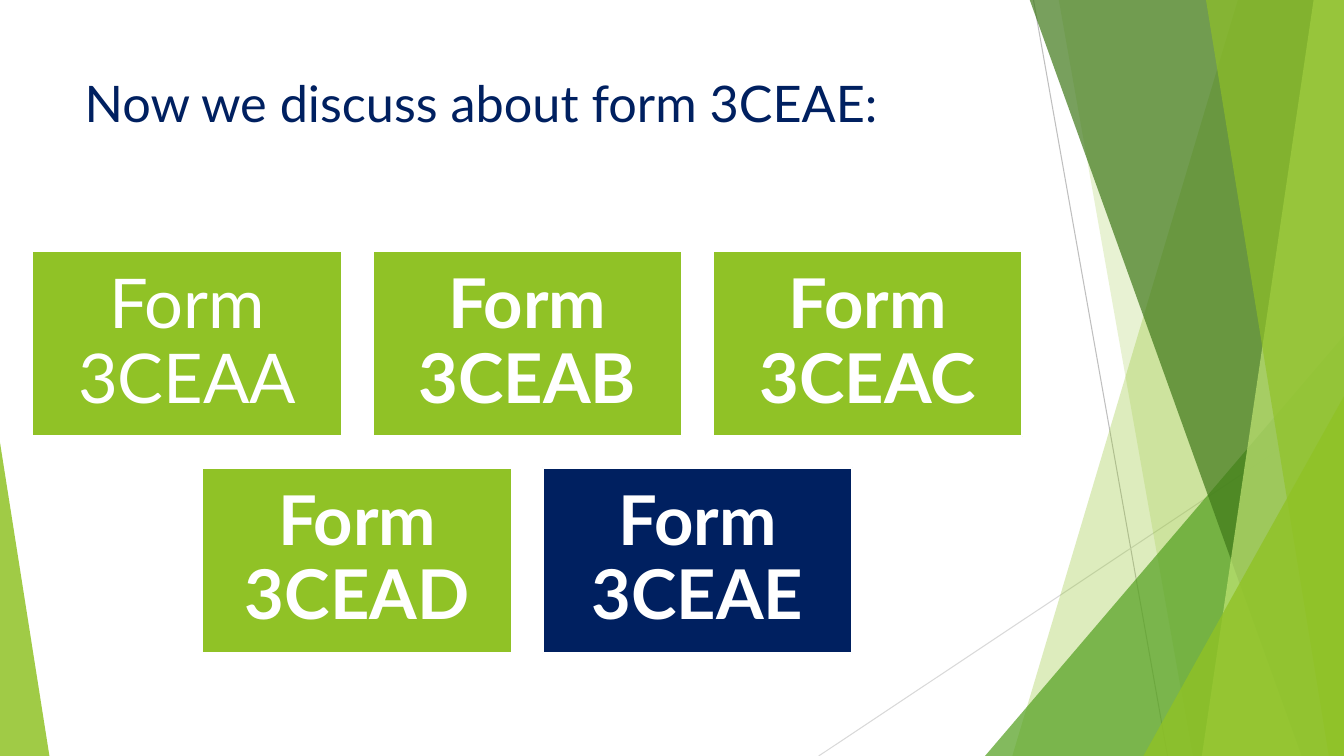
"""Build the slide that introduces form 3CEAE."""
from pptx import Presentation
from pptx.dml.color import RGBColor
from pptx.enum import shapes as es, text as et
from pptx.oxml.ns import qn
from pptx.util import Inches, Pt
from lxml import etree

WIDE, HIGH, TOP = 13.33, 7.5, -0.01
LIME, NAVY, WHITE = "90C226", "002060", "FFFFFF"
BOX_W, BOX_H, STEP_X, STEP_Y = 3.07, 1.84, 3.375, 2.15


def paint(color, code):
    """Set a colour format from a hex string."""
    color.rgb = RGBColor.from_string(code)


def tint(shape, code, alpha):
    """Give a shape a see-through fill and no line or shadow."""
    shape.shadow.inherit = False
    shape.fill.solid()
    paint(shape.fill.fore_color, code)
    clr = shape._element.spPr.find(".//" + qn("a:srgbClr"))
    etree.SubElement(clr, qn("a:alpha")).set("val", str(alpha * 1000))
    shape.line.fill.background()


def add_line(slide, start, end, code):
    """Draw a thin straight line."""
    ends = [Inches(n) for n in (*start, *end)]
    line = slide.shapes.add_connector(es.MSO_CONNECTOR.STRAIGHT, *ends)
    paint(line.line.color, code)
    line.line.width = Pt(0.75)
    etree.SubElement(line._element.spPr, qn("a:effectLst"))


def add_band(slide, top_x, low_x, code, alpha):
    """Draw a band from a slanted left edge to the right slide edge."""
    pen = slide.shapes.build_freeform(Inches(top_x), Inches(TOP), 1.0)
    ends = [(WIDE, TOP), (WIDE, HIGH), (low_x, HIGH)]
    pen.add_line_segments([(Inches(x), Inches(y)) for x, y in ends])
    tint(pen.convert_to_shape(), code, alpha)


def add_peak(slide, left, top, width, tip, code, alpha):
    """Draw a triangle that stands on the bottom slide edge."""
    place = [Inches(n) for n in (left, top, width, HIGH - top)]
    peak = slide.shapes.add_shape(es.MSO_SHAPE.ISOSCELES_TRIANGLE, *place)
    peak.adjustments[0] = tip
    tint(peak, code, alpha)


def style(para, size, code, bold=False):
    """Format the runs of a paragraph."""
    for run in para.runs:
        run.font.name = "Lato"
        run.font.size = Pt(size)
        run.font.bold = bold
        paint(run.font.color, code)


def add_title(slide, words):
    """Place and format the title."""
    title = slide.shapes.title
    title.left, title.top = Inches(0.74), Inches(0.67)
    title.width, title.height = Inches(9.4), Inches(1.44)
    frame = title.text_frame
    frame.text = words
    frame.vertical_anchor = et.MSO_ANCHOR.TOP
    frame.paragraphs[0].alignment = et.PP_ALIGN.LEFT
    style(frame.paragraphs[0], 36, NAVY)


def add_box(slide, left, top, words, code, bold):
    """Draw a filled box with a form name."""
    place = [Inches(n) for n in (left, top, BOX_W, BOX_H)]
    box = slide.shapes.add_shape(es.MSO_SHAPE.RECTANGLE, *place)
    box.shadow.inherit = False
    box.fill.solid()
    paint(box.fill.fore_color, code)
    paint(box.line.color, WHITE)
    box.line.width = Pt(1.5)
    frame = box.text_frame
    frame.text = words
    frame.word_wrap = True
    frame.vertical_anchor = et.MSO_ANCHOR.MIDDLE
    frame.margin_left = frame.margin_right = Inches(0.2)
    frame.margin_top = frame.margin_bottom = Inches(0.2)
    para = frame.paragraphs[0]
    para.alignment = et.PP_ALIGN.CENTER
    para.line_spacing = 0.9
    style(para, 49, WHITE, bold)


def add_decor(slide):
    """Draw the faceted side art from back to front."""
    add_line(slide, (10.25, 0), (11.58, HIGH), "BFBFBF")
    add_line(slide, (WIDE, 4.03), (8.12, HIGH), "D9D9D9")
    add_band(slide, 12.28, 10.04, LIME, 30)
    add_band(slide, 10.5, 11.83, LIME, 20)
    add_peak(slide, 9.77, 3.33, 3.56, 1, "54A021", 72)
    add_band(slide, 10.21, 12.91, "3F7819", 70)
    add_band(slide, 13.03, 11.92, "C0E474", 70)
    add_band(slide, 11.96, 13.18, LIME, 65)
    add_peak(slide, 11.34, 3.93, 1.99, 1, LIME, 80)
    add_peak(slide, 0, 4.39, 0.49, 0, LIME, 85)


def main():
    """Build and save the deck."""
    deck = Presentation()
    deck.slide_width, deck.slide_height = Inches(WIDE), Inches(HIGH)
    slide = deck.slides.add_slide(deck.slide_layouts[5])
    add_decor(slide)
    add_title(slide, "Now we discuss about form 3CEAE:")
    rows = [(0.32, "ABC"), (0.32 + STEP_X / 2, "DE")]
    for row, (left, marks) in enumerate(rows):
        for col, mark in enumerate(marks):
            code = NAVY if mark == "E" else LIME
            add_box(slide, left + col * STEP_X, 2.49 + row * STEP_Y,
                    f"Form 3CEA{mark}", code, mark != "A")
    deck.save("out.pptx")


if __name__ == "__main__":
    main()
